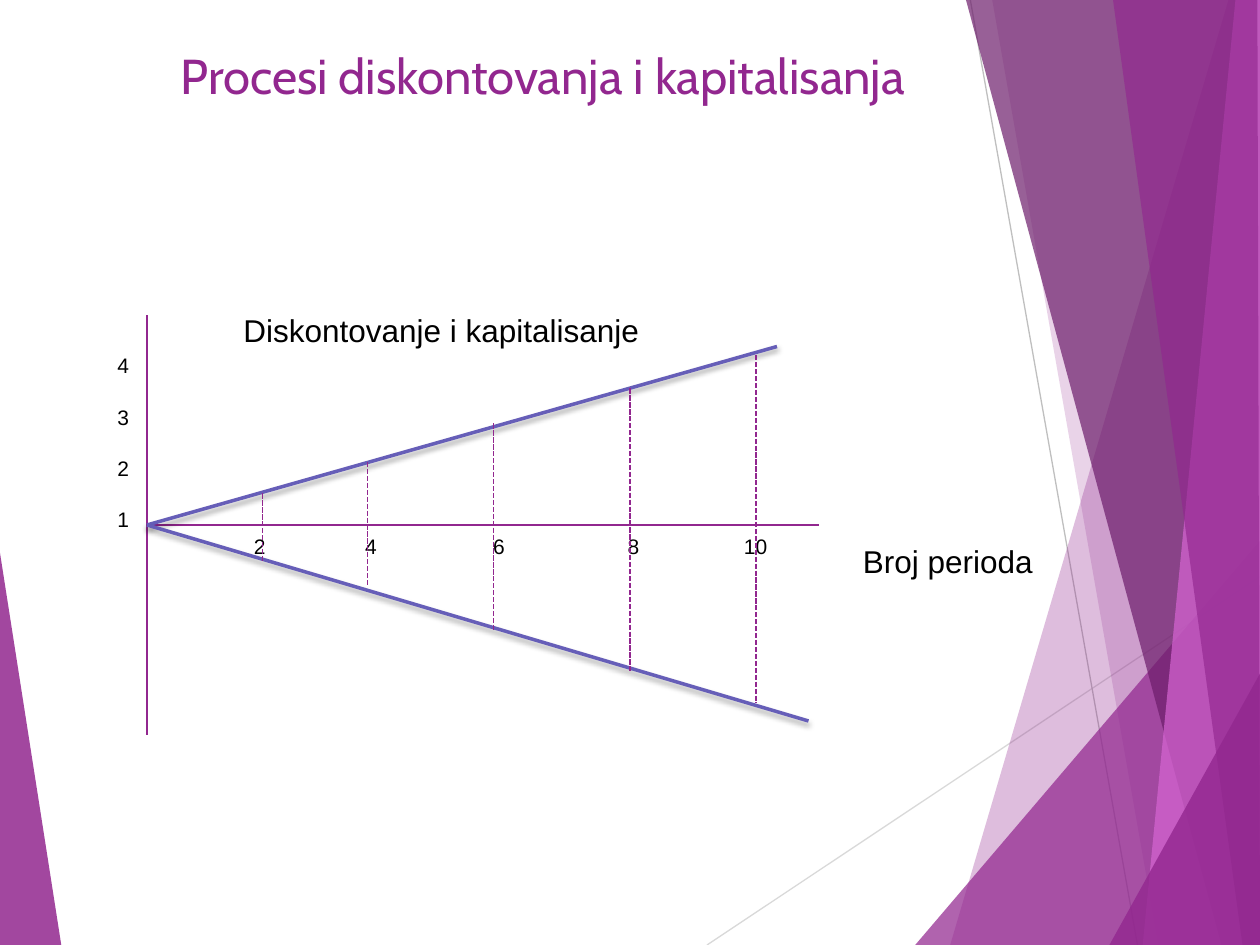
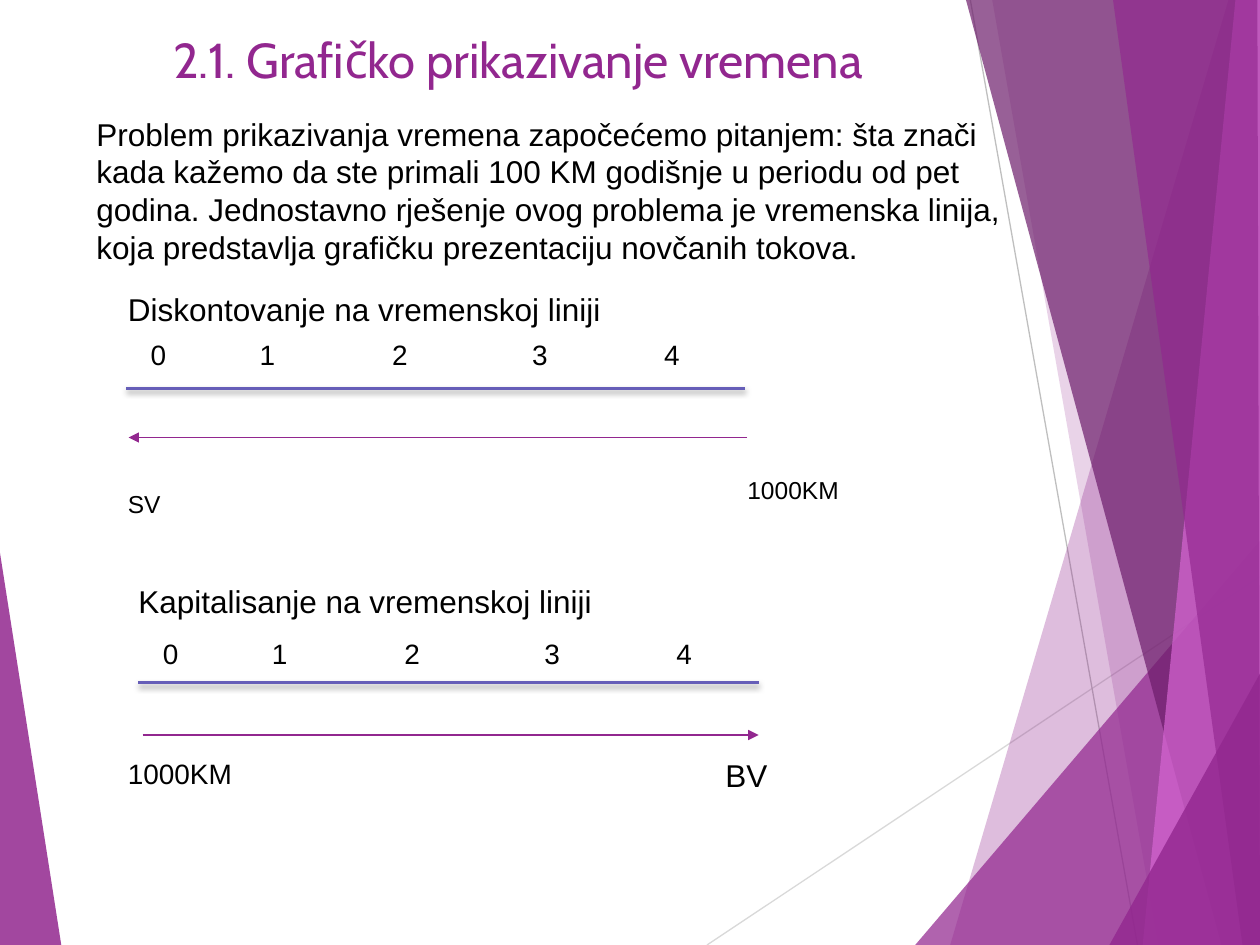
from lxml import etree
from pptx import Presentation
from pptx.dml.color import RGBColor
from pptx.enum.dml import MSO_LINE
from pptx.enum.shapes import MSO_CONNECTOR
from pptx.enum.text import MSO_ANCHOR, MSO_AUTO_SIZE, PP_ALIGN
from pptx.oxml.ns import qn
from pptx.util import Pt

STRAIGHT = MSO_CONNECTOR.STRAIGHT
DASH = MSO_LINE.SQUARE_DOT
TOP = MSO_ANCHOR.TOP
FIXED = MSO_AUTO_SIZE.NONE
LEFT, CENTER = PP_ALIGN.LEFT, PP_ALIGN.CENTER

WIDE, HIGH = 720, 540
PURPLE, PLUM, PINK, BLUE, BLACK = "92278F", "6D1D6B", "D665D3", "665EB8", "000000"

RAYS = [
    ((404, 540, 720, 329.5), "D9D9D9"),
    ((554.5, 0, 650, 540), "BFBFBF"),
]
BANDS = [
    ([(0, 316), (35, HIGH), (0, HIGH)], PURPLE, 85),
    ([(702, 0), (543, HIGH), (WIDE, HIGH), (WIDE, 0)], PURPLE, 30),
    ([(567, 0), (662, HIGH), (WIDE, HIGH), (WIDE, 0)], PURPLE, 20),
    ([(523, HIGH), (WIDE, 309), (WIDE, HIGH)], PURPLE, 72),
    ([(552, 0), (698, HIGH), (WIDE, HIGH), (WIDE, 0)], PLUM, 70),
    ([(706, 0), (653, HIGH), (WIDE, HIGH), (WIDE, 0)], PINK, 70),
    ([(636, 0), (710, HIGH), (WIDE, HIGH), (718.5, 0)], PURPLE, 65),
    ([(634, HIGH), (WIDE, 385), (WIDE, HIGH)], PURPLE, 80),
]

FAN = {
    "title": ("Procesi diskontovanja i kapitalisanja", (60, 22.5, 500, 55)),
    "axes": [(84, 180, 84, 420), (84, 300, 468, 300)],
    "rays": [(84, 300, 444, 198), (84, 300, 462, 412)],
    "drops": [(150, 282, 320.5), (210, 264, 335), (282, 242, 360),
              (360, 222, 384), (432, 203, 402)],
    "texts": [
        ("Broj perioda", (486, 306, 112, 29), {"wrap": False}),
        ("4\n3\n2\n1", (60, 198, 18, 108), {"size": 12, "gap": 15}),
        ("Diskontovanje i kapitalisanje", (132, 174, 300, 29), {}),
        ("2\t4\t6\t8\t10", (138, 301.5, 314, 22),
         {"size": 12, "tabs": (63.5, 136.75, 213.5, 280)}),
    ],
}

TICKS = "0\t1\t2\t3\t4"
STOPS = {"size": 16, "tabs": (62.25, 138, 218, 293.5)}
TIME = {
    "title": ("2.1. Grafičko prikazivanje vremena", (46, 13, 500, 60)),
    "spans": [(72, 222, 426, 222), (79, 390, 433.5, 390)],
    "flows": [(427, 250, 73.5, 250), (81.5, 420, 433.5, 420)],
    "texts": [
        ("Problem prikazivanja vremena započećemo pitanjem: šta znači kada "
         "kažemo da ste primali 100 KM godišnje u periodu od pet godina. "
         "Jednostavno rješenje ovog problema je vremenska linija, koja "
         "predstavlja grafičku prezentaciju novčanih tokova.",
         (48, 62, 558, 94), {}),
        ("Diskontovanje na vremenskoj liniji", (66, 162, 390, 29), {}),
        (TICKS, (79, 189.5, 340, 27), STOPS),
        ("SV", (66, 276, 34, 24), {"size": 14, "wrap": False}),
        ("1000KM", (420, 268, 67, 24), {"size": 14, "wrap": False}),
        ("Kapitalisanje na vremenskoj liniji", (72, 329, 276.5, 29), {"wrap": False}),
        (TICKS, (86, 360, 340, 27), STOPS),
        ("1000KM", (66, 428.5, 75, 27), {"size": 16, "wrap": False}),
        ("BV", (407.5, 428.5, 39, 29), {"wrap": False}),
    ],
}


def tint(code):
    return RGBColor.from_string(code)


def node(root, tag, **attrs):
    return etree.SubElement(root, qn(tag), attrs)


def write(frame, text, size=18, font="Arial", color=BLACK, align=LEFT,
          wrap=True, gap=0, tabs=()):
    frame.text = text
    frame.word_wrap = wrap
    frame.auto_size = FIXED
    frame.vertical_anchor = TOP
    for num, para in enumerate(frame.paragraphs):
        para.alignment = align
        if gap and num:
            para.space_before = Pt(gap)
        if tabs:
            stops = node(para._p.get_or_add_pPr(), "a:tabLst")
            for pos in tabs:
                node(stops, "a:tab", pos=str(Pt(pos)), algn="l")
        for run in para.runs:
            run.font.size = Pt(size)
            run.font.name = font
            run.font.color.rgb = tint(color)


def rule(slide, ends, color=PURPLE, width=1, dash=None, arrow=False, shade=False):
    line = slide.shapes.add_connector(STRAIGHT, *map(Pt, ends))
    line.line.color.rgb = tint(color)
    line.line.width = Pt(width)
    if dash:
        line.line.dash_style = dash
    props = line._element.spPr
    if arrow:
        node(props.find(qn("a:ln")), "a:tailEnd", type="triangle")
    fx = node(props, "a:effectLst")
    if shade:
        drop = node(fx, "a:outerShdw", blurRad=str(Pt(3)), dist=str(Pt(2)),
                    dir="5400000", rotWithShape="0")
        node(node(drop, "a:srgbClr", val=BLACK), "a:alpha", val="35000")


def band(slide, points, color, alpha):
    first, *rest = [(Pt(x), Pt(y)) for x, y in points]
    pen = slide.shapes.build_freeform(*first)
    pen.add_line_segments(rest, close=True)
    shape = pen.convert_to_shape()
    shape.shadow.inherit = False
    shape.line.fill.background()
    shape.fill.solid()
    shape.fill.fore_color.rgb = tint(color)
    code = shape._element.spPr.find(qn("a:solidFill"))[0]
    node(code, "a:alpha", val=str(alpha * 1000))


def start(deck, data):
    slide = deck.slides.add_slide(deck.slide_layouts[5])
    for ends, color in RAYS:
        rule(slide, ends, color, 0.75)
    for item in BANDS:
        band(slide, *item)
    text, place = data["title"]
    head = slide.shapes.title
    head.left, head.top, head.width, head.height = map(Pt, place)
    write(head.text_frame, text, size=28, font="Cabin", color=PURPLE, align=CENTER)
    return slide


def label(slide, data):
    for text, place, style in data["texts"]:
        box = slide.shapes.add_textbox(*map(Pt, place))
        write(box.text_frame, text, **style)


def draw_fan(deck):
    slide = start(deck, FAN)
    for ends in FAN["axes"]:
        rule(slide, ends)
    for ends in FAN["rays"]:
        rule(slide, ends, BLUE, 2, shade=True)
    label(slide, FAN)
    for x, top, low in FAN["drops"]:
        rule(slide, (x, top, x, low), dash=DASH)


def draw_time(deck):
    slide = start(deck, TIME)
    for ends in TIME["spans"]:
        rule(slide, ends, BLUE, 2, shade=True)
    for ends in TIME["flows"]:
        rule(slide, ends, arrow=True)
    label(slide, TIME)


def main():
    deck = Presentation()
    deck.slide_width, deck.slide_height = Pt(WIDE), Pt(HIGH)
    draw_fan(deck)
    draw_time(deck)
    deck.save("out.pptx")


if __name__ == "__main__":
    main()
